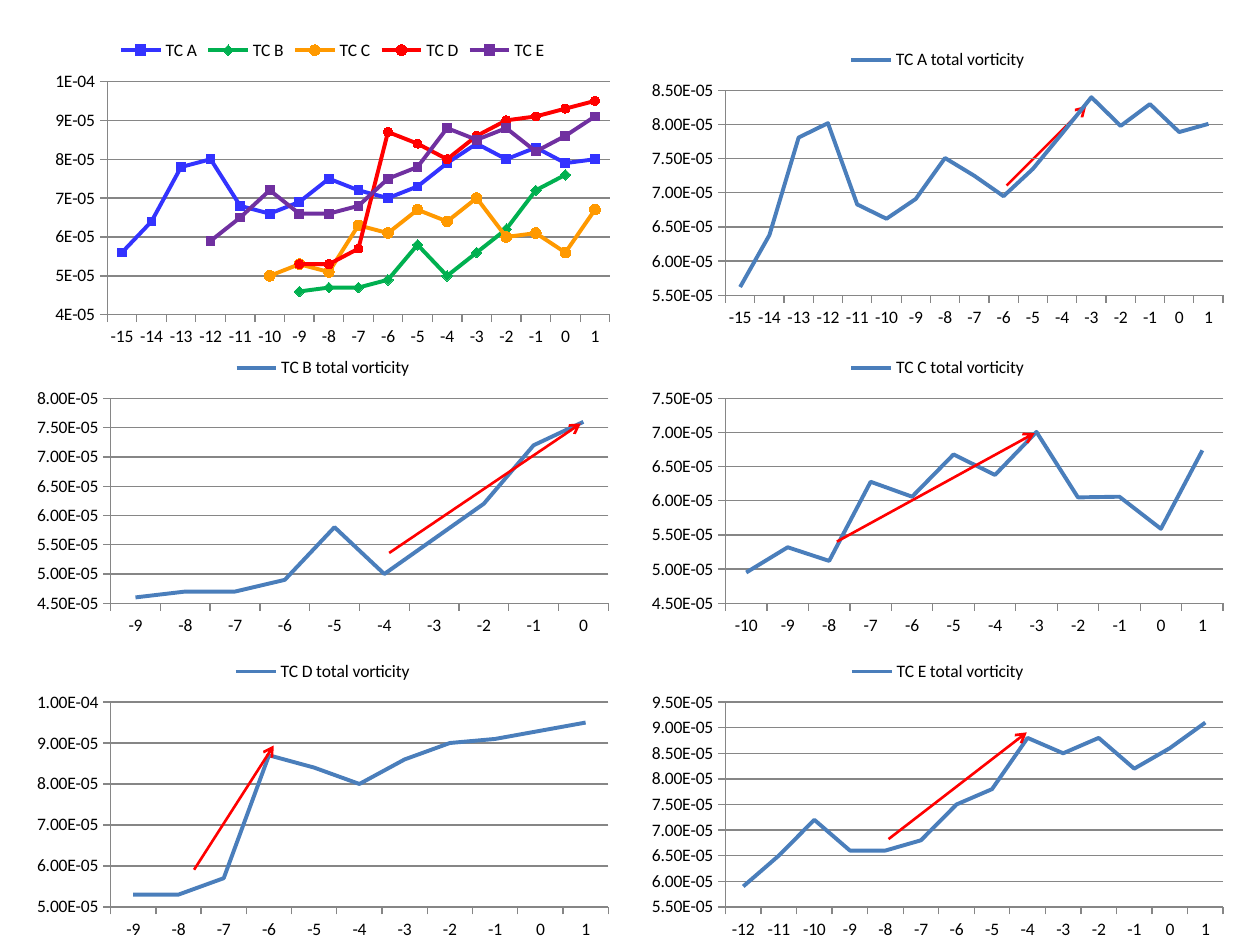
from dataclasses import dataclass

from lxml import etree
from pptx import Presentation
from pptx.chart.data import CategoryChartData
from pptx.dml.color import RGBColor
from pptx.enum.chart import XL_CHART_TYPE, XL_LEGEND_POSITION, XL_MARKER_STYLE, XL_TICK_LABEL_POSITION, XL_TICK_MARK
from pptx.enum.shapes import MSO_CONNECTOR
from pptx.oxml.ns import qn
from pptx.util import Pt

LINE, LINE_MARKERS = XL_CHART_TYPE.LINE, XL_CHART_TYPE.LINE_MARKERS
TOP, LOW, OUTSIDE = XL_LEGEND_POSITION.TOP, XL_TICK_LABEL_POSITION.LOW, XL_TICK_MARK.OUTSIDE
SQUARE, DIAMOND, CIRCLE = XL_MARKER_STYLE.SQUARE, XL_MARKER_STYLE.DIAMOND, XL_MARKER_STYLE.CIRCLE


@dataclass(frozen=True)
class Theme:
    """Colours, font and sizes of the slide."""
    font: str = "Calibri"
    size: float = 10
    text: str = "000000"
    grid: str = "868686"
    total: str = "4A7EBB"
    arrow: str = "FF0000"
    series_width: float = 2.25
    grid_width: float = 0.75
    arrow_width: float = 1.5


THEME = Theme()
LAST_DAY = 1
COLS, ROWS = (14.4, 365.75), (20.5, 196.5, 370)
PANEL_W, PANEL_H = 340, 170
OVERVIEW_BOX = (25, 15, 330, 187)

CYCLONES = {
    "TC A": dict(start=-15, color="3333FF", marker=(SQUARE, 5), vals=[
        5.62, 6.38, 7.81, 8.02, 6.83, 6.62, 6.91, 7.51, 7.25, 6.95, 7.35, 7.87, 8.4, 7.98, 8.3, 7.89, 8.01]),
    "TC B": dict(start=-9, color="00B050", marker=(DIAMOND, 6), vals=[
        4.6, 4.7, 4.7, 4.9, 5.8, 5, 5.6, 6.2, 7.2, 7.6]),
    "TC C": dict(start=-10, color="FF9900", marker=(CIRCLE, 6), vals=[
        4.95, 5.32, 5.12, 6.28, 6.06, 6.68, 6.38, 7.01, 6.05, 6.06, 5.59, 6.74]),
    "TC D": dict(start=-9, color="FF0000", marker=(CIRCLE, 5), vals=[
        5.3, 5.3, 5.7, 8.7, 8.4, 8, 8.6, 9, 9.1, 9.3, 9.5]),
    "TC E": dict(start=-12, color="7030A0", marker=(SQUARE, 5), vals=[
        5.9, 6.5, 7.2, 6.6, 6.6, 6.8, 7.5, 7.8, 8.8, 8.5, 8.8, 8.2, 8.6, 9.1]),
}

PANELS = {
    "TC A": dict(cell=(1, 0), scale=(5.5, 8.5, 0.5), arrow=(209.5, 85.5, 255, 40), behind=True),
    "TC B": dict(cell=(0, 1), scale=(4.5, 8, 0.5), arrow=(208, 119.5, 317.5, 45.5)),
    "TC C": dict(cell=(1, 1), scale=(4.5, 7.5, 0.5), arrow=(112.5, 113, 225.5, 51)),
    "TC D": dict(cell=(0, 2), scale=(5, 10, 1), arrow=(96.5, 127, 142, 56)),
    "TC E": dict(cell=(1, 2), scale=(5.5, 9.5, 0.5), arrow=(142, 109.5, 221, 48.5)),
}


def vorticity(value):
    """Turn a value in units of 1E-05 into a plain number."""
    return None if value is None else round(value * 1e-5, 7)


def set_attrs(obj, **values):
    """Set each given attribute on an object."""
    for name, value in values.items():
        setattr(obj, name, value)


def format_line(line, color, width):
    """Give a line its colour and width."""
    line.color.rgb = RGBColor.from_string(color)
    line.width = Pt(width)


def add_line_chart(slide, box, kind, days, series, scale, number_format):
    """Add a line chart in the box with a top legend and a fixed value scale."""
    data = CategoryChartData(number_format=number_format)
    data.categories = [str(day) for day in days]
    for name, vals in series.items():
        data.add_series(name, [vorticity(v) for v in vals])
    chart = slide.shapes.add_chart(kind, *map(Pt, box), data).chart
    set_attrs(chart, has_title=False, has_legend=True)
    set_attrs(chart.legend, position=TOP, include_in_layout=False)
    set_attrs(chart.font, name=THEME.font, size=Pt(THEME.size))
    chart.font.color.rgb = RGBColor.from_string(THEME.text)
    low, high, step = map(vorticity, scale)
    axis = chart.value_axis
    set_attrs(axis, minimum_scale=low, maximum_scale=high, major_unit=step, has_major_gridlines=True)
    set_attrs(axis.tick_labels, number_format=number_format, number_format_is_linked=False)
    format_line(axis.major_gridlines.format.line, THEME.grid, THEME.grid_width)
    for ax in (axis, chart.category_axis):
        set_attrs(ax, major_tick_mark=OUTSIDE, tick_label_position=LOW)
        format_line(ax.format.line, THEME.grid, THEME.grid_width)
    for ser in chart.plots[0].series:
        ser.smooth = False
        format_line(ser.format.line, THEME.total, THEME.series_width)
    return chart


def add_trend_arrow(slide, box, ends):
    """Add a trend arrow whose ends are relative to the box."""
    x, y = box[:2]
    x1, y1, x2, y2 = ends
    sp = slide.shapes.add_connector(
        MSO_CONNECTOR.STRAIGHT, Pt(x + x1), Pt(y + y1), Pt(x + x2), Pt(y + y2))
    format_line(sp.line, THEME.arrow, THEME.arrow_width)
    etree.SubElement(sp.line._get_or_add_ln(), qn("a:tailEnd"), type="arrow")
    etree.SubElement(sp._element.spPr, qn("a:effectLst"))


def add_overview(slide, box):
    """Add the chart that compares all cyclones on one day axis, to one decimal."""
    first = min(tc["start"] for tc in CYCLONES.values())
    days = range(first, LAST_DAY + 1)
    series = {}
    for name, tc in CYCLONES.items():
        by_day = {day: round(v, 1) for day, v in enumerate(tc["vals"], tc["start"])}
        series[name] = [by_day.get(day) for day in days]
    chart = add_line_chart(slide, box, LINE_MARKERS, days, series, (4, 10, 1), "0.E+00")
    for ser, tc in zip(chart.plots[0].series, CYCLONES.values()):
        format_line(ser.format.line, tc["color"], THEME.series_width)
        style, size = tc["marker"]
        set_attrs(ser.marker, style=style, size=size)
        fmt = ser.marker.format
        fmt.fill.solid()
        fmt.fill.fore_color.rgb = RGBColor.from_string(tc["color"])
        format_line(fmt.line, tc["color"], THEME.grid_width)


def add_panel(slide, box, name, scale, arrow, behind=False):
    """Add the total vorticity chart of one cyclone with its trend arrow."""
    tc = CYCLONES[name]
    days = range(tc["start"], tc["start"] + len(tc["vals"]))
    series = {f"{name} total vorticity": tc["vals"]}
    if behind:
        add_trend_arrow(slide, box, arrow)
    add_line_chart(slide, box, LINE, days, series, scale, "0.00E+00")
    if not behind:
        add_trend_arrow(slide, box, arrow)


def main():
    """Build the slide and save it."""
    prs = Presentation()
    set_attrs(prs, slide_width=Pt(720), slide_height=Pt(540))
    slide = prs.slides.add_slide(prs.slide_layouts[6])
    for name, panel in PANELS.items():
        col, row = panel["cell"]
        box = (COLS[col], ROWS[row], PANEL_W, PANEL_H)
        add_panel(slide, box, name, panel["scale"], panel["arrow"], panel.get("behind", False))
    add_overview(slide, OVERVIEW_BOX)
    prs.save("out.pptx")


if __name__ == "__main__":
    main()
